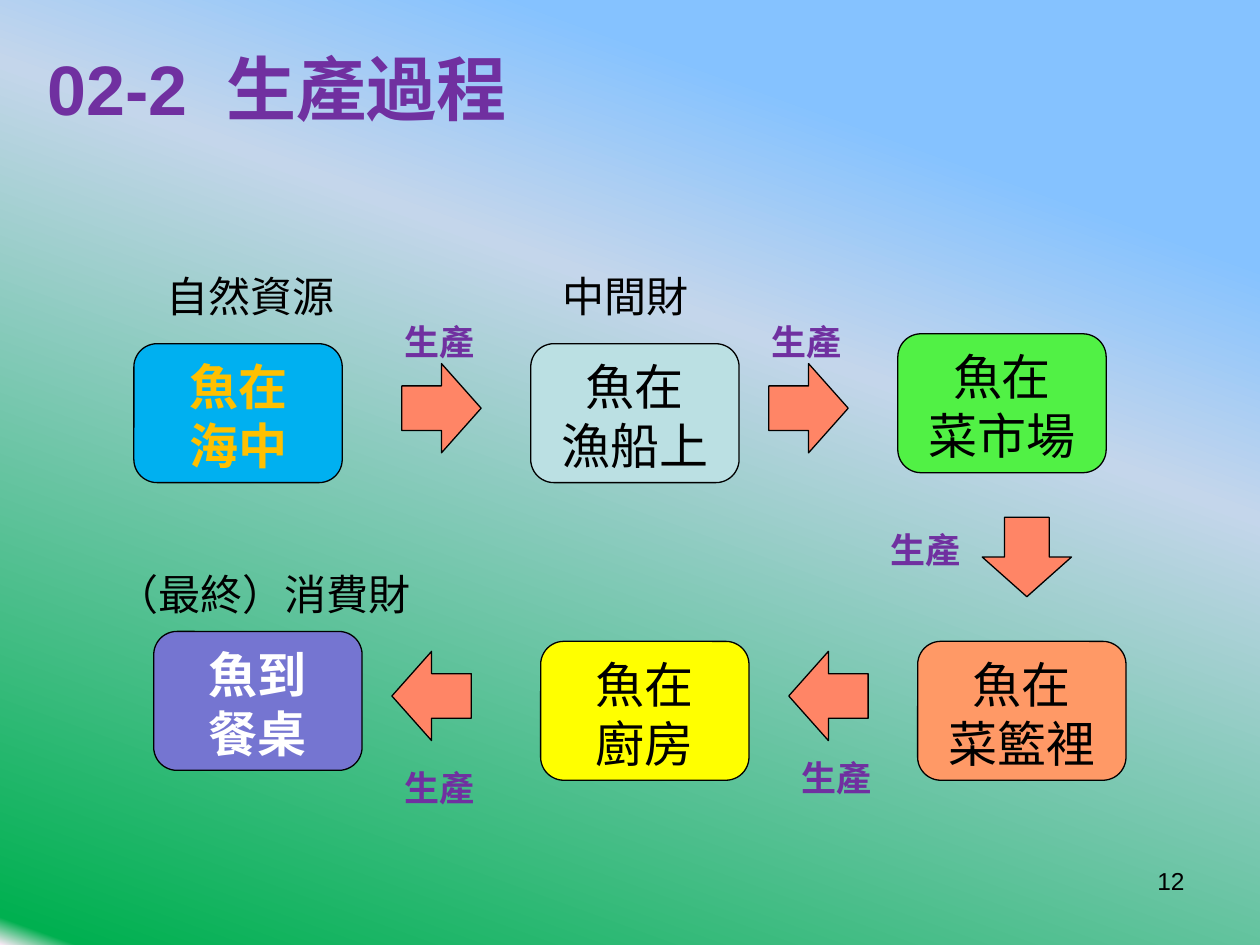
import pptx
import pptx.util
import pptx.dml.color
import pptx.enum.shapes
import pptx.enum.text
import pptx.oxml
import pptx.oxml.ns

SHAPE = pptx.enum.shapes.MSO_SHAPE
ALIGN = pptx.enum.text.PP_ALIGN
ANCHOR = pptx.enum.text.MSO_ANCHOR

COLORS = {
    "black": "000000", "white": "FFFFFF", "purple": "7030A0",
    "gold": "FFC000", "sea": "00B0F0", "boat": "BBE0E3",
    "market": "51F145", "basket": "FF9966", "kitchen": "FFFF00",
    "table": "7575D1", "arrow": "FF8566",
}
BACKDROP = [(19, "85C2FF"), (37, "C4D6EB"), (98, "00B050"), (100, "FFEBFA")]

# Drawing grid: 2 mm cells, with a small offset from the slide's corner
CELL = pptx.util.Mm(2)
GRID_LEFT, GRID_TOP = 0.5, 0.65
BOX_SIZE = (21, 14)
ARROW_SIZE = (8, 9)

# column, row, lines, fill, text colour, bold
STAGES = [
    (13, 34, "魚在\n海中", "sea", "gold", True),
    (53, 34, "魚在\n漁船上", "boat", "black", False),
    (90, 33, "魚在\n菜市場", "market", "black", False),
    (92, 64, "魚在\n菜籃裡", "basket", "black", False),
    (54, 64, "魚在\n廚房", "kitchen", "black", False),
    (15, 63, "魚到\n餐桌", "table", "white", True),
]
# arrow column and row, rotation, label column and row
STEPS = [
    (40, 36, 0, 39, 31),
    (77, 36, 0, 76, 31),
    (99, 51, 90, 88, 52),
    (79, 65, 180, 79, 75),
    (39, 65, 180, 39, 76),
]
# column, row, width in cells, text
CAPTIONS = [
    (10, 56, 32.5, "（最終）消費財"),
    (15, 26, 19.7, "自然資源"),
    (55, 26, 15.4, "中間財"),
]


def rgb(name):
    return pptx.dml.color.RGBColor.from_string(COLORS[name])


def grid_place(column, row, width, height):
    cells = (column + GRID_LEFT, row + GRID_TOP, width, height)
    return [round(count * CELL) for count in cells]


def write(frame, text, size, color, bold=False, align=ALIGN.LEFT):
    frame.text = text
    for para in frame.paragraphs:
        para.alignment = align
        para.font.name = "Arial"
        para.font.size = pptx.util.Pt(size)
        para.font.bold = bold
        para.font.color.rgb = rgb(color)


def paint_background(page):
    fill = page.background.fill
    fill.gradient()
    fill.gradient_angle = 360 - 110
    stops = fill._fill._gradFill.find(pptx.oxml.ns.qn("a:gsLst"))
    for stop in list(stops):
        stops.remove(stop)
    for percent, color in BACKDROP:
        stops.append(pptx.oxml.parse_xml(
            f'<a:gs {pptx.oxml.ns.nsdecls("a")} pos="{percent * 1000}">'
            f'<a:srgbClr val="{color}"/></a:gs>'))


def add_title(page, text):
    title = page.shapes.title
    title.left, title.top = pptx.util.Inches(0.28), 0
    title.width, title.height = pptx.util.Inches(8.47), pptx.util.Inches(1.39)
    title.text_frame.vertical_anchor = ANCHOR.MIDDLE
    write(title.text_frame, text, 40, "purple", bold=True)


def add_outlined(page, kind, place, fill):
    shape = page.shapes.add_shape(kind, *place)
    shape.shadow.inherit = False
    shape.fill.solid()
    shape.fill.fore_color.rgb = rgb(fill)
    shape.line.color.rgb = rgb("black")
    shape.line.width = pptx.util.Pt(0.75)
    return shape


def add_stage(page, column, row, text, fill, color, bold):
    box = add_outlined(page, SHAPE.ROUNDED_RECTANGLE,
                       grid_place(column, row, *BOX_SIZE), fill)
    box.text_frame.vertical_anchor = ANCHOR.TOP
    write(box.text_frame, text, 28, color, bold, ALIGN.CENTER)


def add_arrow(page, column, row, rotation):
    arrow = add_outlined(page, SHAPE.RIGHT_ARROW,
                         grid_place(column, row, *ARROW_SIZE), "arrow")
    arrow.rotation = rotation


def add_label(page, place, text, size, color, bold=False):
    frame = page.shapes.add_textbox(*place).text_frame
    frame.word_wrap = False
    frame.auto_size = pptx.enum.text.MSO_AUTO_SIZE.SHAPE_TO_FIT_TEXT
    write(frame, text, size, color, bold)


def add_page_number(page, deck, number):
    box = page.shapes.add_textbox(
        round(deck.slide_width * 0.717), round(deck.slide_height * 0.91),
        round(deck.slide_width * 0.233), round(deck.slide_height * 0.07))
    box.text_frame.word_wrap = True
    write(box.text_frame, number, 14, "black", align=ALIGN.RIGHT)


def main():
    deck = pptx.Presentation()
    deck.slide_width = pptx.util.Inches(10)
    deck.slide_height = pptx.util.Inches(7.5)
    page = deck.slides.add_slide(deck.slide_layouts[5])

    paint_background(page)
    add_title(page, "02-2  生產過程")

    # Stages of the fish, then the production steps between them
    for stage in STAGES:
        add_stage(page, *stage)
    for column, row, rotation, _, _ in STEPS:
        add_arrow(page, column, row, rotation)
    for _, _, _, column, row in STEPS:
        add_label(page, grid_place(column, row, 9.7, 5.6),
                  "生產", 20, "purple", bold=True)

    # Page number and kinds of goods
    add_page_number(page, deck, "12")
    for column, row, width, text in CAPTIONS:
        add_label(page, grid_place(column, row, width, 6.4), text, 24, "black")

    deck.save("out.pptx")


if __name__ == "__main__":
    main()
